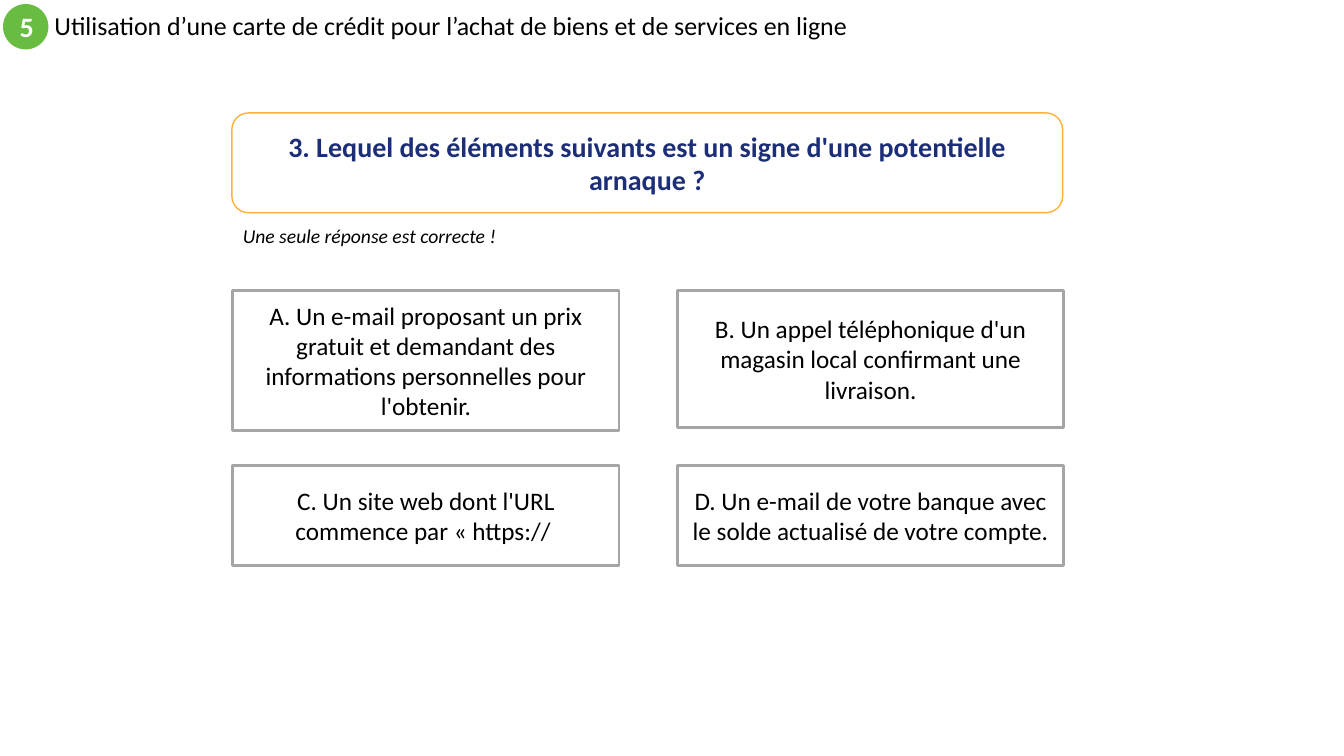
import pptx
import pptx.util
import pptx.dml.color
import pptx.enum.shapes
import pptx.enum.text

RGBColor = pptx.dml.color.RGBColor
Inches = pptx.util.Inches
SHAPES = pptx.enum.shapes.MSO_SHAPE
ALIGN = pptx.enum.text.PP_ALIGN
ANCHOR = pptx.enum.text.MSO_ANCHOR

GREEN = RGBColor(0x68, 0xBC, 0x42)
ORANGE = RGBColor(0xFC, 0xB1, 0x3A)
NAVY = RGBColor(0x1C, 0x2E, 0x78)
GREY = RGBColor(0xA5, 0xA5, 0xA5)
BLACK = RGBColor(0, 0, 0)
WHITE = RGBColor(0xFF, 0xFF, 0xFF)

# Each row of answers: height of its left and right box, with their text
ANSWER_ROWS = [
    [(1.39, "A. Un e-mail proposant un prix gratuit et demandant des "
            "informations personnelles pour l'obtenir."),
     (1.36, "B. Un appel téléphonique d'un magasin local confirmant une livraison.")],
    [(0.99, "C. Un site web dont l'URL commence par « https:// "),
     (0.99, "D. Un e-mail de votre banque avec le solde actualisé de votre compte.")],
]


def write(shape, text, size, color=BLACK, align=ALIGN.CENTER,
          anchor=ANCHOR.MIDDLE, bold=False, italic=False):
    frame = shape.text_frame
    frame.text = text
    frame.word_wrap = True
    frame.auto_size = pptx.enum.text.MSO_AUTO_SIZE.NONE
    frame.vertical_anchor = anchor
    para = frame.paragraphs[0]
    para.alignment = align
    font = para.runs[0].font
    font.name = "Calibri"
    font.size = pptx.util.Pt(size)
    font.color.rgb = color
    font.bold = bold
    font.italic = italic


def add_panel(page, kind, box, fill, line=None, width=1):
    panel = page.shapes.add_shape(kind, *map(Inches, box))
    panel.shadow.inherit = False
    panel.fill.solid()
    panel.fill.fore_color.rgb = fill
    if line is None:
        panel.line.fill.background()
    else:
        panel.line.color.rgb = line
        panel.line.width = pptx.util.Pt(width)
    return panel


def add_header(page, box):
    """Numbered badge followed by the section title."""
    left, top, width, height = box
    badge = add_panel(page, SHAPES.OVAL, (left, top, height, height), GREEN)
    write(badge, "5", 20, WHITE, bold=True)
    title = page.shapes.title
    title.left, title.top = Inches(left + 0.41), Inches(top)
    title.width, title.height = Inches(width - 0.41), Inches(height)
    write(title, "Utilisation d’une carte de crédit pour l’achat de biens "
                 "et de services en ligne", 18.5, align=ALIGN.LEFT)
    title.text_frame.paragraphs[0].line_spacing = 0.9


def add_question(page, box):
    """Framed question with its hint underneath."""
    left, top, width, height = box
    frame = add_panel(page, SHAPES.ROUNDED_RECTANGLE, box, WHITE, ORANGE)
    write(frame, "3. Lequel des éléments suivants est un signe d'une "
                 "potentielle arnaque ?", 20, NAVY, bold=True)
    hint = page.shapes.add_textbox(
        Inches(left + 0.01), Inches(top + height + 0.06), Inches(2.8), Inches(0.34))
    write(hint, "Une seule réponse est correcte !", 14,
          align=ALIGN.LEFT, anchor=ANCHOR.TOP, italic=True)


def add_answers(page, box):
    """Answers on a grid of two columns and two rows."""
    left, top, width, height = box
    gap = 0.58
    column_width = (width - gap) / 2
    last_height = ANSWER_ROWS[-1][0][0]
    row_step = (height - last_height) / (len(ANSWER_ROWS) - 1)
    for row, answers in enumerate(ANSWER_ROWS):
        for column, (answer_height, text) in enumerate(answers):
            cell = (left + column * (column_width + gap), top + row * row_step,
                    column_width, answer_height)
            answer = add_panel(page, SHAPES.RECTANGLE, cell, WHITE, GREY, 2)
            write(answer, text, 18)


def main():
    deck = pptx.Presentation()
    deck.slide_width, deck.slide_height = Inches(13.33), Inches(7.5)
    page = deck.slides.add_slide(deck.slide_layouts[5])
    add_header(page, (0.03, 0.04, 8.99, 0.45))
    add_question(page, (2.3, 1.12, 8.24, 0.99))
    add_answers(page, (2.31, 2.88, 8.24, 2.73))
    deck.save("out.pptx")


if __name__ == "__main__":
    main()
